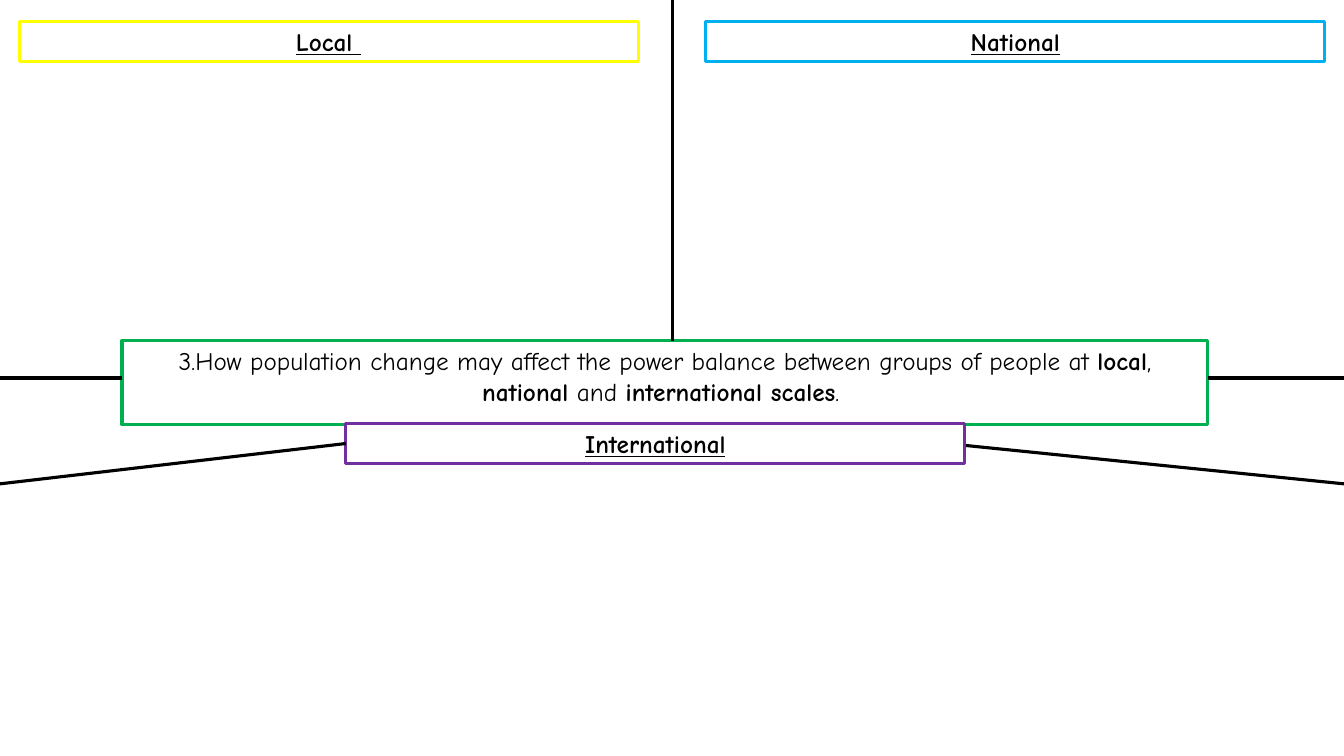
import pptx
import pptx.dml.color
import pptx.enum.shapes
import pptx.enum.text
import pptx.oxml
import pptx.util
from pptx.util import Inches


def color(hex_string):
    return pptx.dml.color.RGBColor.from_string(hex_string)


def format_box(box, position, outline, runs):
    """Place an outlined box and fill it with (text, font format) runs."""
    box.left, box.top, box.width, box.height = [Inches(length) for length in position]
    box.fill.solid()
    box.fill.fore_color.rgb = color("FFFFFF")
    box.line.color.rgb = color(outline)
    box.line.width = pptx.util.Pt(2.25)
    frame = box.text_frame
    frame.word_wrap = True
    frame.auto_size = pptx.enum.text.MSO_AUTO_SIZE.SHAPE_TO_FIT_TEXT
    frame.vertical_anchor = pptx.enum.text.MSO_ANCHOR.TOP
    paragraph = frame.paragraphs[0]
    paragraph.alignment = pptx.enum.text.PP_ALIGN.CENTER
    paragraph.line_spacing = 1.0
    for text, font_format in runs:
        run = paragraph.add_run()
        run.text = text
        run.font.color.rgb = color("000000")
        for name, value in (BODY_FONT | font_format).items():
            setattr(run.font, name, value)


BODY_FONT = {"name": "Comic Neue", "size": pptx.util.Pt(18), "bold": False}
BOLD = {"bold": True}
HEADING = {"bold": True, "underline": True}

presentation = pptx.Presentation()
presentation.slide_width = Inches(13.33)
presentation.slide_height = Inches(7.5)
slide = presentation.slides.add_slide(presentation.slide_layouts[5])

question = [
    ("3.How population change may affect the power balance between groups of people at ", {}),
    ("local", BOLD),
    (", ", {}),
    ("national", BOLD),
    (" and ", {}),
    ("international scales", BOLD),
    (". ", {}),
]
format_box(slide.shapes.title, (1.21, 3.38, 10.77, 0.71), "00B050", question)

scales = [
    ("Local ", 0.19, 0.21, "FFFF00"),
    ("National", 7, 0.21, "00B0F0"),
    ("International", 3.43, 4.2, "7030A0"),
]
for name, left, top, outline in scales:
    heading_box = slide.shapes.add_textbox(0, 0, 0, 0)
    format_box(heading_box, (left, top, 6.14, 0.4), outline, [(name, HEADING)])

dividers = [
    (6.67, 0, 6.67, 3.38),
    (0, 3.75, 1.21, 3.75),
    (11.98, 3.75, 13.33, 3.75),
    (3.43, 4.4, 0, 4.8),
    (13.33, 4.8, 9.58, 4.42),
]
for ends in dividers:
    divider = slide.shapes.add_connector(
        pptx.enum.shapes.MSO_CONNECTOR.STRAIGHT, *[Inches(length) for length in ends]
    )
    divider.line.color.rgb = color("000000")
    divider.line.width = pptx.util.Pt(2.25)
    properties = divider.element.spPr
    properties.append(properties.makeelement(pptx.oxml.ns.qn("a:effectLst"), {}))

presentation.save("out.pptx")
